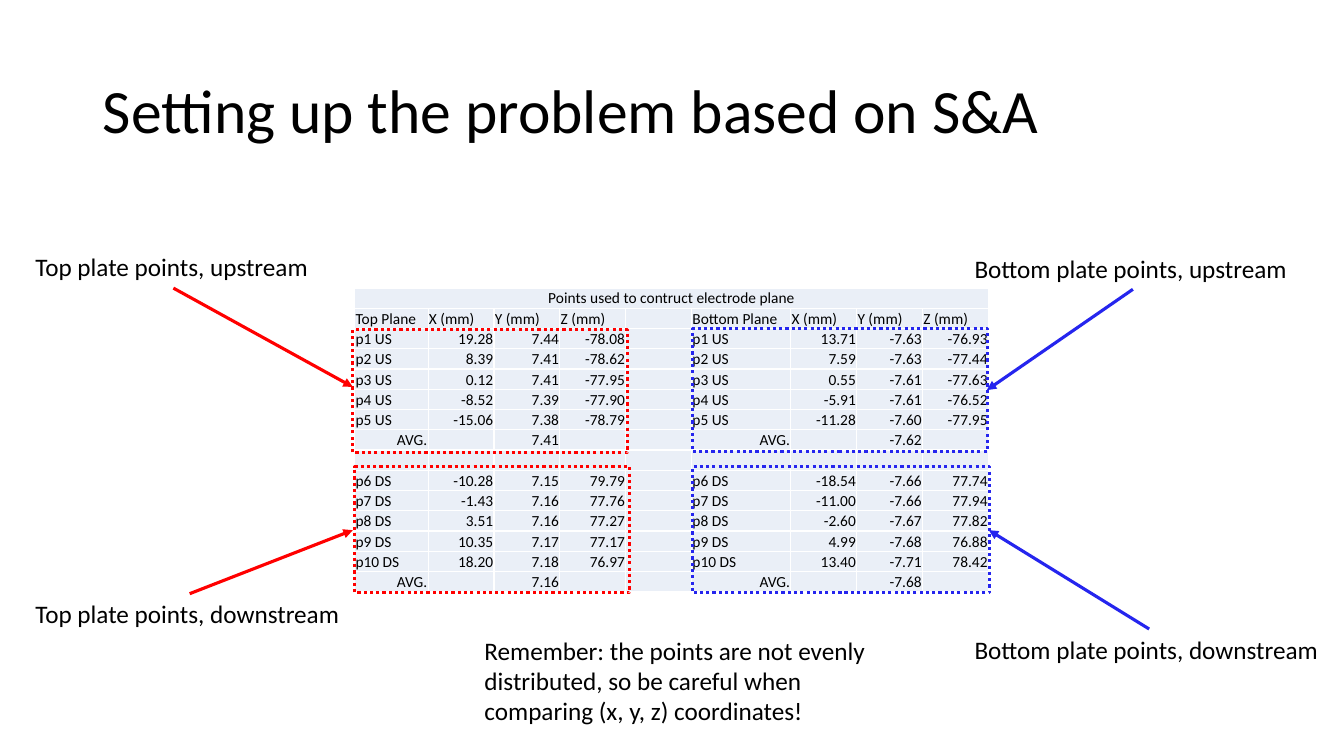
from dataclasses import dataclass

from lxml.etree import SubElement
from pptx import Presentation
from pptx.dml.color import RGBColor
from pptx.enum.dml import MSO_LINE
from pptx.enum.shapes import MSO_CONNECTOR, MSO_SHAPE
from pptx.enum.text import MSO_ANCHOR as Anchor, MSO_AUTO_SIZE as AutoSize, PP_ALIGN as Align
from pptx.oxml.ns import qn
from pptx.util import Cm, Pt


@dataclass(frozen=True)
class Theme:
    font: str = "Calibri"
    ink: str = "000000"
    cell: str = "EAEFF7"
    grid: str = "FFFFFF"
    top_plate: str = "FF0000"
    bottom_plate: str = "2525EE"
    title_size: int = 44
    body_size: int = 18
    table_size: int = 11
    line_width: float = 2.25


@dataclass(frozen=True)
class Box:
    left: float
    top: float
    width: float
    height: float

    def lengths(self):
        return Cm(self.left), Cm(self.top), Cm(self.width), Cm(self.height)


@dataclass(frozen=True)
class Callout:
    label: str
    label_box: Box
    frame: Box
    arrow_start: tuple[float, float]
    arrow_end: tuple[float, float]
    color: str


@dataclass(frozen=True)
class PointGroup:
    """Points measured at one end of both plates, with the mean Y of each plate."""
    suffix: str
    first: int
    top: list[tuple[str, str, str]]
    bottom: list[tuple[str, str, str]]
    top_average: str
    bottom_average: str

    def rows(self) -> list[list[str]]:
        rows = []
        for number, (top, bottom) in enumerate(zip(self.top, self.bottom), self.first):
            name = f"p{number} {self.suffix}"
            rows.append([name, *top, "", name, *bottom])
        rows.append(["AVG.", "", self.top_average, "", "",
                     "AVG.", "", self.bottom_average, ""])
        return rows


THEME = Theme()
TABLE_TITLE = "Points used to contruct electrode plane"
AXES = ["X (mm)", "Y (mm)", "Z (mm)"]
NAME_COLUMNS = (0, 5)
COLUMN_WIDTHS = [1.85] + [1.66] * 4 + [2.5] + [1.66] * 3
ROW_HEIGHT = 0.51

UPSTREAM = PointGroup(
    "US", 1,
    [("19.28", "7.44", "-78.08"), ("8.39", "7.41", "-78.62"), ("0.12", "7.41", "-77.95"),
     ("-8.52", "7.39", "-77.90"), ("-15.06", "7.38", "-78.79")],
    [("13.71", "-7.63", "-76.93"), ("7.59", "-7.63", "-77.44"), ("0.55", "-7.61", "-77.63"),
     ("-5.91", "-7.61", "-76.52"), ("-11.28", "-7.60", "-77.95")],
    "7.41", "-7.62")
DOWNSTREAM = PointGroup(
    "DS", 6,
    [("-10.28", "7.15", "79.79"), ("-1.43", "7.16", "77.76"), ("3.51", "7.16", "77.27"),
     ("10.35", "7.17", "77.17"), ("18.20", "7.18", "76.97")],
    [("-18.54", "-7.66", "77.74"), ("-11.00", "-7.66", "77.94"), ("-2.60", "-7.67", "77.82"),
     ("4.99", "-7.68", "76.88"), ("13.40", "-7.71", "78.42")],
    "7.16", "-7.68")

CALLOUTS = [
    Callout("Top plate points, upstream", Box(0.64, 6.22, 7.47, 1.02),
            Box(8.89, 8.31, 6.93, 3.1), (4.37, 7.26), (8.89, 9.75), THEME.top_plate),
    Callout("Top plate points, downstream", Box(0.64, 14.96, 8.26, 1.02),
            Box(8.94, 11.76, 6.93, 3.18), (4.78, 14.96), (8.89, 13.36), THEME.top_plate),
    Callout("Bottom plate points, upstream", Box(24.31, 6.25, 8.48, 1.02),
            Box(17.45, 8.28, 7.44, 3.1), (28.55, 7.29), (24.87, 9.83), THEME.bottom_plate),
    Callout("Bottom plate points, downstream", Box(24.31, 15.85, 9.27, 1.02),
            Box(17.45, 11.76, 7.49, 3.18), (28.96, 15.85), (24.92, 13.36), THEME.bottom_plate),
]


def format_runs(paragraph, size: int) -> None:
    for run in paragraph.runs:
        run.font.name = THEME.font
        run.font.size = Pt(size)
        run.font.color.rgb = RGBColor.from_string(THEME.ink)


def add_text(slide, text: str, box: Box, size: int, wrap: bool = True):
    frame = slide.shapes.add_textbox(*box.lengths()).text_frame
    frame.text = text
    frame.word_wrap = wrap
    frame.auto_size = AutoSize.SHAPE_TO_FIT_TEXT
    format_runs(frame.paragraphs[0], size)
    return frame


def add_title(slide, text: str) -> None:
    frame = add_text(slide, text, Box(2.34, 1.02, 29.21, 3.68), THEME.title_size)
    frame.auto_size = AutoSize.NONE
    frame.vertical_anchor = Anchor.MIDDLE
    frame.paragraphs[0].line_spacing = 0.9


def style_line(line, color: str) -> None:
    line.color.rgb = RGBColor.from_string(color)
    line.width = Pt(THEME.line_width)


def add_callout(slide, callout: Callout) -> None:
    add_text(slide, callout.label, callout.label_box, THEME.body_size, wrap=False)

    frame = slide.shapes.add_shape(MSO_SHAPE.RECTANGLE, *callout.frame.lengths())
    frame.shadow.inherit = False
    frame.fill.background()
    style_line(frame.line, callout.color)
    frame.line.dash_style = MSO_LINE.ROUND_DOT

    ends = [Cm(value) for value in callout.arrow_start + callout.arrow_end]
    arrow = slide.shapes.add_connector(MSO_CONNECTOR.STRAIGHT, *ends)
    style_line(arrow.line, callout.color)
    SubElement(arrow.line._get_or_add_ln(), qn("a:tailEnd"), type="triangle")
    SubElement(arrow._element.spPr, qn("a:effectLst"))


def fill_cell(cell, text: str, align: Align, anchor: Anchor) -> None:
    cell.margin_left = cell.margin_right = cell.margin_top = Cm(0.02)
    cell.margin_bottom = Cm(0)
    cell.vertical_anchor = anchor
    properties = cell._tc.get_or_add_tcPr()
    for side in ("lnL", "lnR", "lnT", "lnB"):
        border = SubElement(properties, qn(f"a:{side}"), w=str(Pt(1)))
        SubElement(SubElement(border, qn("a:solidFill")), qn("a:srgbClr"), val=THEME.grid)
    cell.fill.solid()
    cell.fill.fore_color.rgb = RGBColor.from_string(THEME.cell)
    paragraph = cell.text_frame.paragraphs[0]
    paragraph.text = text
    paragraph.alignment = align
    format_runs(paragraph, THEME.table_size)
    if not text:
        SubElement(paragraph._p, qn("a:endParaRPr"), sz=str(THEME.table_size * 100))


def add_points_table(slide) -> None:
    blank = [""] * len(COLUMN_WIDTHS)
    rows = [[TABLE_TITLE] + blank[1:],
            ["Top Plane", *AXES, "", "Bottom Plane", *AXES],
            *UPSTREAM.rows(), blank, *DOWNSTREAM.rows()]
    area = Box(8.94, 7.26, sum(COLUMN_WIDTHS), ROW_HEIGHT * len(rows))
    table = slide.shapes.add_table(len(rows), len(blank), *area.lengths()).table
    table.first_row = table.horz_banding = False
    for column, width in zip(table.columns, COLUMN_WIDTHS):
        column.width = Cm(width)
    for row_index, row in enumerate(rows):
        table.rows[row_index].height = Cm(ROW_HEIGHT)
        for column_index, text in enumerate(row):
            is_name = column_index in NAME_COLUMNS and text != "AVG."
            align = Align.LEFT if row_index == 1 or is_name else Align.RIGHT
            anchor = Anchor.BOTTOM
            if row_index == 0:
                align, anchor = Align.CENTER, Anchor.MIDDLE
            fill_cell(table.cell(row_index, column_index), text, align, anchor)
    table.cell(0, 0).merge(table.cell(0, len(blank) - 1))


def main() -> None:
    deck = Presentation()
    deck.slide_width, deck.slide_height = Cm(33.87), Cm(19.05)
    slide = deck.slides.add_slide(deck.slide_layouts[6])
    add_title(slide, "Setting up the problem based on S&A")
    add_points_table(slide)
    for callout in CALLOUTS:
        add_callout(slide, callout)
    add_text(slide, "Remember: the points are not evenly distributed, so be careful when "
             "comparing (x, y, z) coordinates!", Box(11.96, 15.88, 10.74, 2.57), THEME.body_size)
    deck.save("out.pptx")


if __name__ == "__main__":
    main()
